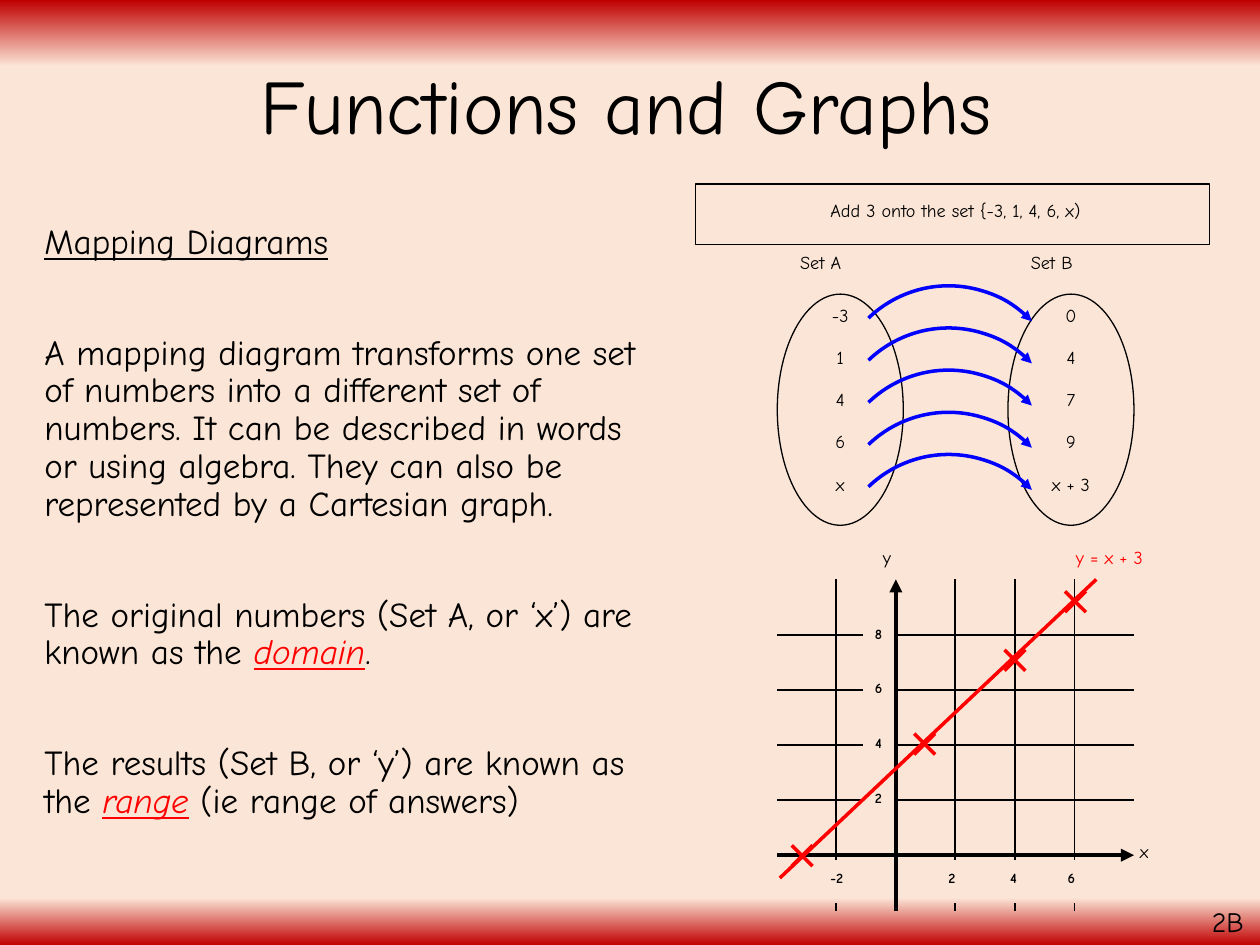
from lxml.etree import SubElement
from pptx import Presentation
from pptx.dml.color import RGBColor
from pptx.enum.shapes import MSO_CONNECTOR, MSO_SHAPE
from pptx.enum.text import MSO_ANCHOR, MSO_AUTO_SIZE, PP_ALIGN
from pptx.oxml.ns import qn
from pptx.util import Cm, Pt

FONT = "Comic Neue"
BLACK, RED, BLUE, CREAM = "000000", "FF0000", "0000FF", "FBE5D6"
BACKGROUND_STOPS = [(0, "C00000"), (7, CREAM), (95, CREAM), (100, "C00000")]

TITLE = "Functions and Graphs"
# Each paragraph is a list of (text, style); style is "", "heading" or "term".
BODY = [
    [("Mapping Diagrams", "heading")],
    [("A mapping diagram transforms one set of numbers into a different set of "
      "numbers. It can be described in words or using algebra. They can also be "
      "represented by a Cartesian graph.", "")],
    [("The original numbers (Set A, or ‘x’) are known as the ", ""),
     ("domain", "term"), (".", "")],
    [("The results (Set B, or ‘y’) are known as the ", ""),
     ("range", "term"), (" (ie range of answers)", "")],
]
MAPPING = [("-3", "0"), ("1", "4"), ("4", "7"), ("6", "9"), ("x", "x + 3")]
SET_CENTRES = (16.94, 21.59)
ROW_TOP, ROW_STEP = 5.93, 0.85

# Graph, in cm
LEFT, RIGHT, TOP, BOTTOM = 15.67, 22.86, 11.68, 18.36
ORIGIN_X, ORIGIN_Y, STEP_X, STEP_Y = 18.06, 17.24, 1.2, 1.11
X_LABELS = [("-2", 16.87, 1.12), ("2", 19.19, 0.64), ("4", 20.43, 0.64), ("6", 21.6, 0.64)]
Y_LABELS = ["2", "4", "6", "8"]
CROSSES = [(16.17, 17.25), (18.64, 15), (21.68, 12.13), (20.46, 13.31)]
CROSS_ARM = 0.21

# Text, left, top, width, alignment, colour
CAPTIONS = [
    ("Set A", 15.88, 4.87, 2.33, PP_ALIGN.LEFT, BLACK),
    ("Set B", 20.53, 4.87, 2.33, PP_ALIGN.LEFT, BLACK),
    ("Add 3 onto the set {-3, 1, 4, 6, x)", 13.76, 3.81, 11.01, PP_ALIGN.CENTER, BLACK),
    ("x", 22.73, 16.74, 1.09, PP_ALIGN.LEFT, BLACK),
    ("y", 17.55, 10.82, 1.09, PP_ALIGN.LEFT, BLACK),
    ("y = x + 3", 21.44, 10.82, 3.28, PP_ALIGN.LEFT, RED),
]


def rgb(value):
    return RGBColor.from_string(value)


def set_font(font, size, color=BLACK, bold=None):
    font.name, font.size, font.bold = FONT, Pt(size), bold
    font.color.rgb = rgb(color)


def place(shape, left, top, width, height):
    shape.left, shape.top = Cm(left), Cm(top)
    shape.width, shape.height = Cm(width), Cm(height)


def set_line(shape, color, width, arrow=False):
    shape.line.color.rgb = rgb(color)
    shape.line.width = Pt(width)
    if arrow:
        line = shape.line._get_or_add_ln()
        SubElement(line, qn("a:tailEnd"), type="triangle")


def add_line(shapes, start, end, color=BLACK, width=1, arrow=False):
    line = shapes.add_connector(MSO_CONNECTOR.STRAIGHT, *map(Cm, start + end))
    set_line(line, color, width, arrow)
    SubElement(line._element.spPr, qn("a:effectLst"))


def add_outline(shapes, kind, left, top, width, height):
    shape = shapes.add_shape(kind, Cm(left), Cm(top), Cm(width), Cm(height))
    shape.shadow.inherit = False
    shape.fill.background()
    set_line(shape, BLACK, 0.75)


def add_label(shapes, text, left, top, width, height=1.02, align=PP_ALIGN.CENTER,
              color=BLACK, size=18, bold=None, inset=0.25, raised=True):
    box = shapes.add_textbox(Cm(left), Cm(top), Cm(width), Cm(height))
    frame = box.text_frame
    frame.word_wrap = True
    frame.margin_left = frame.margin_right = Cm(inset)
    para = frame.paragraphs[0]
    para.alignment = align
    span = para.add_run()
    span.text = text
    set_font(span.font, size, color, bold)
    if raised:
        span._r.get_or_add_rPr().set("baseline", "30000")
    return box


def add_tick_label(shapes, text, left, top, width):
    """Add a label that hides the grid behind the slide background."""
    box = add_label(shapes, text, left, top, width, 0.85, size=14, bold=True, inset=0)
    properties = box._element.spPr
    properties.remove(properties.find(qn("a:noFill")))
    box._element.set("useBgFill", "1")


def add_mapping_arrow(shapes, left, top, radius=2.33):
    """Draw a quarter circle, turned so that it arches from set to set."""
    builder = shapes.build_freeform(Cm(left), Cm(top))
    builder.add_line_segments([(Cm(left + radius), Cm(top + radius))], close=False)
    arc = builder.convert_to_shape()
    outline = next(arc._element.iter(qn("a:path")))
    outline.remove(outline.find(qn("a:lnTo")))
    SubElement(outline, qn("a:arcTo"), wR=str(Cm(radius)), hR=str(Cm(radius)),
               stAng="16200000", swAng="5400000")
    arc.rotation = 316.1
    arc.shadow.inherit = False
    arc.fill.background()
    set_line(arc, BLUE, 2, arrow=True)


def paint_background(slide):
    fill = slide.background.fill
    fill.gradient()
    fill.gradient_angle = 270
    stops = next(slide.element.iter(qn("a:gsLst")))
    for stop in list(stops):
        stops.remove(stop)
    for percent, color in BACKGROUND_STOPS:
        stop = SubElement(stops, qn("a:gs"), pos=str(percent * 1000))
        SubElement(stop, qn("a:srgbClr"), val=color)


def fill_placeholders(slide):
    title, body = slide.placeholders
    place(title, 1.68, 0.36, 21.89, 3.68)
    title.text_frame.text = TITLE
    title.text_frame.vertical_anchor = MSO_ANCHOR.MIDDLE
    para = title.text_frame.paragraphs[0]
    para.alignment, para.line_spacing = PP_ALIGN.CENTER, 0.9
    set_font(para.font, 44)

    place(body, 0, 4.39, 13.54, 12.57)
    frame = body.text_frame
    for index, parts in enumerate(BODY):
        para = frame.add_paragraph() if index else frame.paragraphs[0]
        para.line_spacing = 0.9
        para.space_before = Pt(41.7 if index else 0)
        properties = para._p.get_or_add_pPr()
        properties.set("marL", str(Cm(0.64)))
        properties.set("indent", "0")
        SubElement(properties, qn("a:buNone"))
        for text, style in parts:
            span = para.add_run()
            span.text = text
            set_font(span.font, 20, RED if style == "term" else BLACK)
            if style:
                span.font.underline = True
                span.font.italic = style == "term"
    for holder in (title, body):
        holder.text_frame.auto_size = MSO_AUTO_SIZE.NONE


def draw_mapping(shapes):
    for centre in SET_CENTRES:
        add_outline(shapes, MSO_SHAPE.OVAL, centre - 1.27, ROW_TOP, 2.54, 4.66)
    for row, values in enumerate(MAPPING):
        offset = row * ROW_STEP
        for centre, text in zip(SET_CENTRES, values):
            width = 1.27 if len(text) < 3 else 2.12
            add_label(shapes, text, centre - width / 2, ROW_TOP + offset, width)
        add_mapping_arrow(shapes, 17.99, 5.28 + offset)


def draw_graph(shapes):
    for step in range(1, 5):
        y = ORIGIN_Y - step * STEP_Y
        add_line(shapes, (LEFT, y), (RIGHT, y))
    for step in (-1, 1, 2, 3):
        x = ORIGIN_X + step * STEP_X
        add_line(shapes, (x, TOP), (x, BOTTOM))
    add_line(shapes, (LEFT, ORIGIN_Y), (RIGHT, ORIGIN_Y), width=2.5, arrow=True)
    add_line(shapes, (ORIGIN_X, BOTTOM), (ORIGIN_X, TOP), width=2.5, arrow=True)
    for step, text in enumerate(Y_LABELS):
        add_tick_label(shapes, text, 17.39, 15.72 - step * 1.1, 0.64)
    for text, centre, width in X_LABELS:
        add_tick_label(shapes, text, centre - width / 2, 17.34, width)
    for x, y in CROSSES:
        cross = shapes.add_group_shape()
        for rise in (CROSS_ARM, -CROSS_ARM):
            add_line(cross.shapes, (x - CROSS_ARM, y - rise),
                     (x + CROSS_ARM, y + rise), RED, 2)
    add_line(shapes, (15.72, 17.7), (22.1, TOP), RED, 2)


def main():
    deck = Presentation()
    deck.slide_width, deck.slide_height = Cm(25.4), Cm(19.05)
    slide = deck.slides.add_slide(deck.slide_layouts[1])
    paint_background(slide)
    fill_placeholders(slide)
    draw_mapping(slide.shapes)
    draw_graph(slide.shapes)
    add_outline(slide.shapes, MSO_SHAPE.RECTANGLE, 14.02, 3.71, 10.36, 1.22)
    for text, left, top, width, align, color in CAPTIONS:
        add_label(slide.shapes, text, left, top, width, align=align, color=color)
    add_label(slide.shapes, "2B", 24.18, 18.11, 1.42, 0.94, PP_ALIGN.LEFT,
              size=16, raised=False)
    deck.save("out.pptx")


if __name__ == "__main__":
    main()
